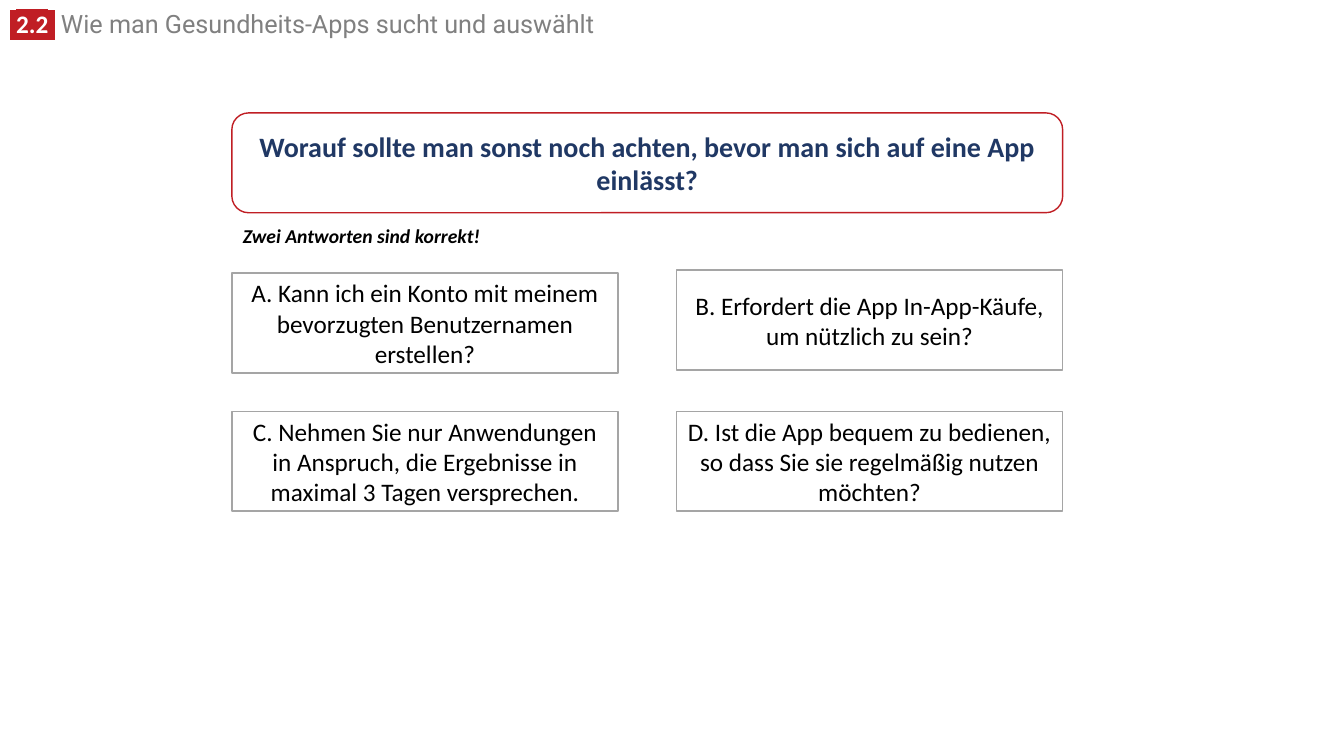
from lxml import etree
from pptx import Presentation
from pptx import util as u
from pptx.dml.color import RGBColor
from pptx.enum import shapes, text
from pptx.oxml.ns import qn

RED = RGBColor(0xC0, 0x1E, 0x24)
NAVY = RGBColor(0x20, 0x38, 0x64)
GREY = RGBColor(0x80, 0x80, 0x80)
SILVER = RGBColor(0xA5, 0xA5, 0xA5)
WHITE = RGBColor(0xFF, 0xFF, 0xFF)
BLACK = RGBColor(0, 0, 0)

HEADING = [
    (" ", "Roboto", True),
    ("2.2", "Calibri", True),
    (" ", "Roboto", True),
    (" Wie man Gesundheits-Apps sucht und auswählt", "Roboto", False),
]
QUESTION = "Worauf sollte man sonst noch achten, bevor man sich auf eine App einlässt?"
HINT = "Zwei Antworten sind korrekt!"
ANSWERS = [
    ("A. Kann ich ein Konto mit meinem bevorzugten Benutzernamen erstellen?", 2.71),
    ("B. Erfordert die App In-App-Käufe, um nützlich zu sein?", 2.68),
    ("C. Nehmen Sie nur Anwendungen in Anspruch, die Ergebnisse in maximal 3 Tagen versprechen.", 4.08),
    ("D. Ist die App bequem zu bedienen, so dass Sie sie regelmäßig nutzen möchten?", 4.08),
]

LEFT, COLUMN_STEP = 2.3, 4.41
ANSWER_WIDTH, BOX_HEIGHT = 3.83, 0.99
QUESTION_WIDTH = COLUMN_STEP + ANSWER_WIDTH

QUESTION_FONT = {"size": u.Pt(20), "name": "Calibri", "bold": True}
ANSWER_FONT = {"size": u.Pt(18), "name": "Calibri"}
HINT_FONT = {"size": u.Pt(14), "name": "Calibri", "bold": True, "italic": True}


def add_run(paragraph, words, color, font):
    run = paragraph.add_run()
    run.text = words
    run.font.color.rgb = color
    for key, value in font.items():
        setattr(run.font, key, value)
    return run


def highlight(run, color):
    properties = run.font.fill._xPr
    mark = etree.Element(qn("a:highlight"))
    etree.SubElement(mark, qn("a:srgbClr"), val=str(color))
    properties.find(qn("a:solidFill")).addnext(mark)


def add_panel(slide, preset, place, words, outline, color, font):
    panel = slide.shapes.add_shape(preset, *map(u.Inches, place))
    panel.shadow.inherit = False
    panel.fill.solid()
    panel.fill.fore_color.rgb = WHITE
    panel.line.color.rgb = outline
    panel.line.width = u.Pt(1)
    frame = panel.text_frame
    frame.word_wrap = True
    frame.vertical_anchor = text.MSO_ANCHOR.MIDDLE
    paragraph = frame.paragraphs[0]
    paragraph.alignment = text.PP_ALIGN.CENTER
    add_run(paragraph, words, color, font)


def add_label(slide, place, wrap):
    frame = slide.shapes.add_textbox(*map(u.Inches, place)).text_frame
    frame.word_wrap = wrap
    frame.auto_size = text.MSO_AUTO_SIZE.SHAPE_TO_FIT_TEXT
    return frame.paragraphs[0]


def main():
    deck = Presentation()
    deck.slide_width, deck.slide_height = u.Inches(13.33), u.Inches(7.5)
    slide = deck.slides.add_slide(deck.slide_layouts[6])

    heading = add_label(slide, (0, 0.09, 9.52, 0.35), True)
    heading.line_spacing = 0.8
    for words, face, is_number in HEADING:
        font = {"size": u.Pt(18), "name": face, "bold": is_number}
        run = add_run(heading, words, WHITE if is_number else GREY, font)
        if is_number:
            highlight(run, RED)

    add_panel(slide, shapes.MSO_SHAPE.ROUNDED_RECTANGLE,
              (LEFT, 1.12, QUESTION_WIDTH, BOX_HEIGHT),
              QUESTION, RED, NAVY, QUESTION_FONT)

    hint = add_label(slide, (2.31, 2.17, 2.57, 0.34), False)
    add_run(hint, HINT, BLACK, HINT_FONT)

    for index, (answer, top) in enumerate(ANSWERS):
        left = LEFT + index % 2 * COLUMN_STEP
        add_panel(slide, shapes.MSO_SHAPE.RECTANGLE,
                  (left, top, ANSWER_WIDTH, BOX_HEIGHT),
                  answer, SILVER, BLACK, ANSWER_FONT)

    deck.save("out.pptx")


if __name__ == "__main__":
    main()
